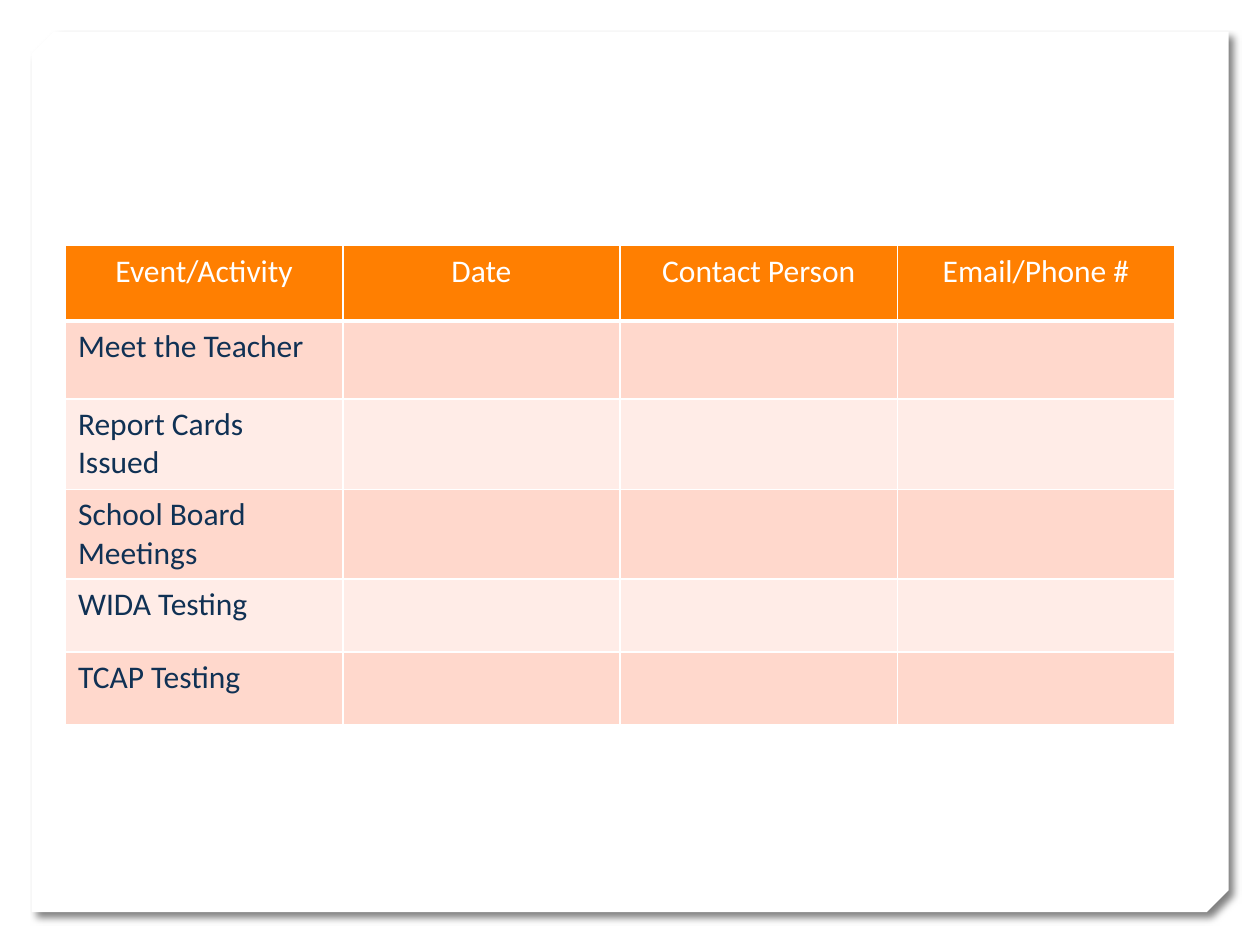
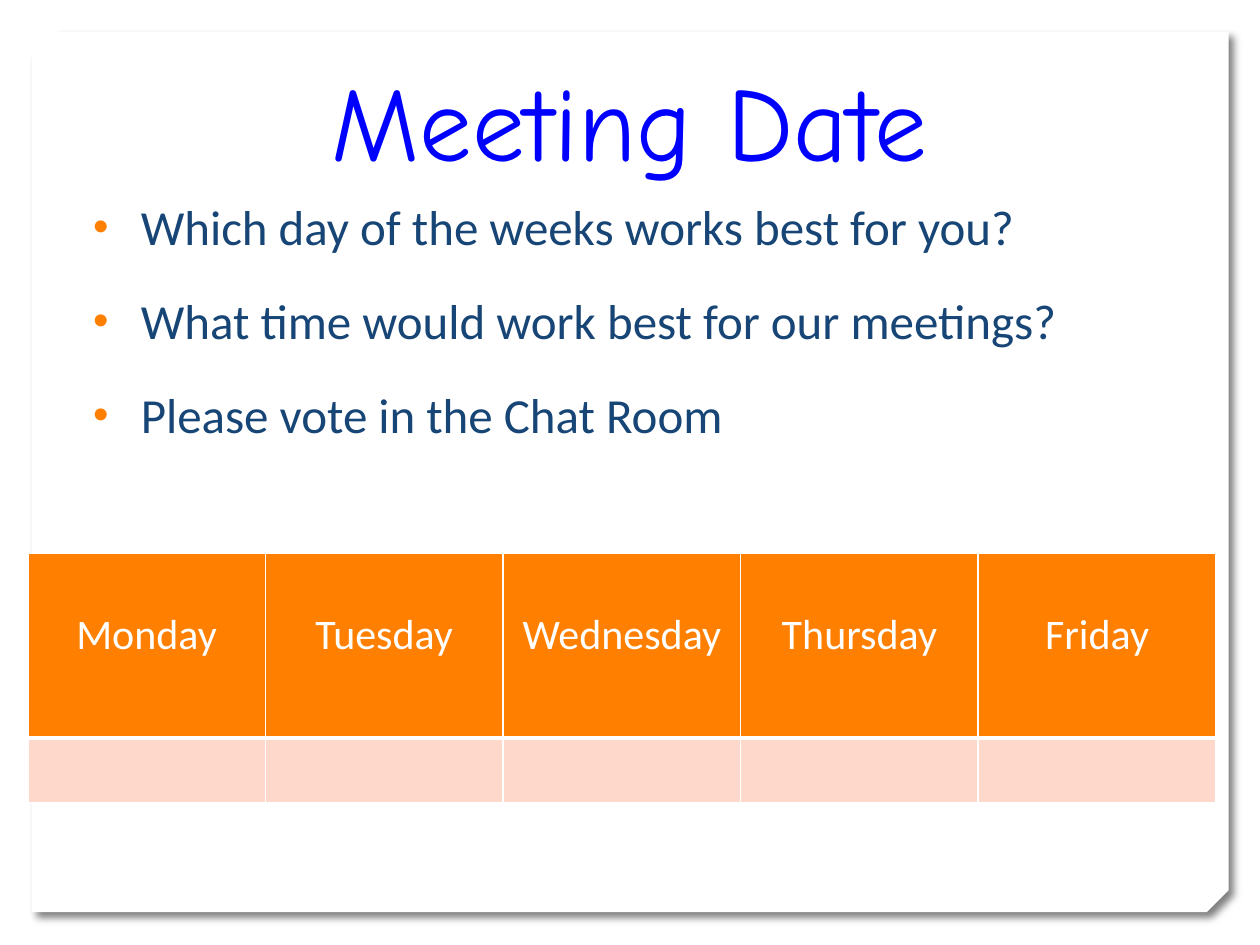
from lxml.etree import SubElement
from pptx import Presentation
from pptx.dml.color import RGBColor
from pptx.enum.shapes import MSO_SHAPE
from pptx.enum.text import MSO_ANCHOR, PP_ALIGN
from pptx.oxml import parse_xml
from pptx.oxml.ns import nsdecls, qn
from pptx.util import Cm, Pt

# Shared colours and fonts
WHITE = RGBColor(0xFF, 0xFF, 0xFF)
ORANGE = RGBColor(0xFF, 0x7F, 0x01)
BANDS = [RGBColor(0xFF, 0xD8, 0xCC), RGBColor(0xFF, 0xEC, 0xE7)]
NAVY = RGBColor(0x10, 0x31, 0x54)
STEEL = RGBColor(0x17, 0x45, 0x76)
BLUE = RGBColor(0x00, 0x00, 0xFF)
BODY_FONT = "Calibri"
TITLE_FONT = "Comic Neue"

# Slide content
HEADS = ["Event/Activity", "Date", "Contact Person", "Email/Phone #"]
EVENTS = ["Meet the Teacher", "Report Cards Issued", "School Board Meetings",
          "WIDA Testing", "TCAP Testing"]
DAYS = ["Monday", "Tuesday", "Wednesday", "Thursday", "Friday"]
POINTS = ["Which day of the weeks works best for you?",
          "What time would work best for our meetings?",
          "Please vote in the Chat Room"]


def style(para, size, color, font=BODY_FONT, align=PP_ALIGN.LEFT):
    para.alignment = align
    for run in para.runs:
        run.font.size = Pt(size)
        run.font.name = font
        run.font.color.rgb = color


def add_paper(slide):
    """White sheet with a snipped corner and a soft shadow."""
    paper = slide.shapes.add_shape(MSO_SHAPE.SNIP_2_DIAG_RECTANGLE,
                                   Cm(0.64), Cm(0.64), Cm(24.13), Cm(17.75))
    paper.adjustments[0] = 0
    paper.adjustments[1] = 0.025
    paper.fill.solid()
    paper.fill.fore_color.rgb = WHITE
    paper.line.fill.background()
    paper.shadow.inherit = False
    props = paper.element.spPr
    props.xfrm.set("flipV", "1")
    glow = SubElement(props.find(qn("a:effectLst")), qn("a:outerShdw"),
                      blurRad=str(Pt(4)), dist=str(Pt(5)), dir="2700000",
                      algn="tl", rotWithShape="0")
    tint = SubElement(glow, qn("a:srgbClr"), val="000000")
    SubElement(tint, qn("a:alpha"), val="50000")


def add_page(deck):
    slide = deck.slides.add_slide(deck.slide_layouts[6])
    add_paper(slide)
    return slide


def add_edges(cell, base):
    """White cell borders; base is the weight of the bottom one."""
    props = cell._tc.get_or_add_tcPr()
    for spot, (side, width) in enumerate(zip("LRTB", (1, 1, 1, base))):
        props.insert(spot, parse_xml(
            f'<a:ln{side} {nsdecls("a")} w="{Pt(width)}"><a:solidFill>'
            f'<a:srgbClr val="{WHITE}"/></a:solidFill></a:ln{side}>'))


def add_grid(slide, left, top, width, heights, rows, size, pad=0.13):
    """Table with an orange head row and banded body; pad is the head's top margin."""
    count = len(rows[0])
    table = slide.shapes.add_table(len(rows), count, Cm(left), Cm(top),
                                   Cm(width * count), Cm(sum(heights))).table
    for column in table.columns:
        column.width = Cm(width)
    for i, (height, row) in enumerate(zip(heights, rows)):
        table.rows[i].height = Cm(height)
        head = i == 0
        for cell, text in zip(table.rows[i].cells, row):
            cell.fill.solid()
            cell.fill.fore_color.rgb = ORANGE if head else BANDS[(i - 1) % 2]
            add_edges(cell, 3 if head else 1)
            if text:
                cell.text_frame.text = text
                style(cell.text_frame.paragraphs[0], size,
                      WHITE if head else NAVY,
                      align=PP_ALIGN.CENTER if head else PP_ALIGN.LEFT)
            if head:
                cell.margin_top = Cm(pad)


def add_box(slide, left, top, width, height):
    frame = slide.shapes.add_textbox(Cm(left), Cm(top), Cm(width),
                                     Cm(height)).text_frame
    frame.word_wrap = True
    return frame


def add_title(slide, text):
    frame = add_box(slide, 2.16, 0.81, 21.06, 3.18)
    frame.vertical_anchor = MSO_ANCHOR.MIDDLE
    frame.text = text
    style(frame.paragraphs[0], 60, BLUE, TITLE_FONT, PP_ALIGN.CENTER)


def add_list(slide, points):
    frame = add_box(slide, 1.63, 3.84, 22.17, 7.16)
    frame.text = "\n".join(points)
    for i, para in enumerate(frame.paragraphs):
        props = para._p.get_or_add_pPr()
        props.set("marL", str(Cm(0.96)))
        props.set("indent", str(-Cm(0.96)))
        tint = SubElement(props, qn("a:buClr"))
        SubElement(tint, qn("a:srgbClr"), val=str(ORANGE))
        SubElement(props, qn("a:buSzPct"), val="90000")
        SubElement(props, qn("a:buFont"), typeface="Arial")
        SubElement(props, qn("a:buChar"), char="•")
        if i:
            para.space_before = Pt(20)
        style(para, 28, STEEL)


def main():
    deck = Presentation()
    deck.slide_width, deck.slide_height = Cm(25.4), Cm(19.05)

    # Events and contacts
    slide = add_page(deck)
    rows = [HEADS] + [[event, "", "", ""] for event in EVENTS]
    add_grid(slide, 1.32, 4.95, 5.59, [1.52, 1.57, 1.83, 1.8, 1.47, 1.47],
             rows, 18)

    # Vote on the meeting date
    slide = add_page(deck)
    add_grid(slide, 0.56, 11.15, 4.79, [3.73, 1.3],
             [DAYS, [""] * len(DAYS)], 24, pad=1.14)
    add_title(slide, "Meeting Date")
    add_list(slide, POINTS)

    deck.save("out.pptx")


if __name__ == "__main__":
    main()
